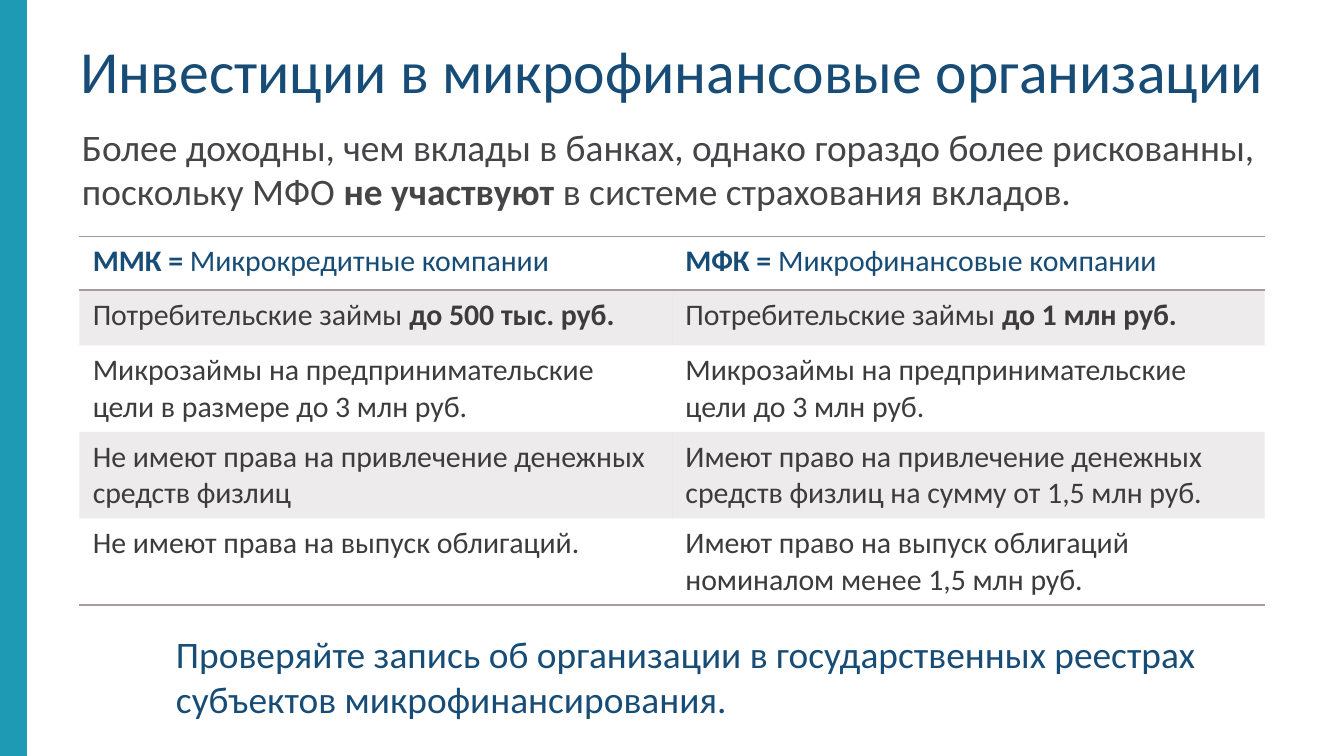
from lxml.etree import SubElement
from pptx import Presentation
from pptx.dml.color import RGBColor
from pptx.enum.shapes import MSO_SHAPE
from pptx.enum.text import MSO_ANCHOR, MSO_AUTO_SIZE, PP_ALIGN
from pptx.oxml import parse_xml
from pptx.oxml.ns import nsdecls, qn
from pptx.util import Inches, Pt

WIDTH = 10
HEIGHT = WIDTH * 9 / 16
FONT = "Calibri"
COLORS = {
    "accent": "1E9AB4",
    "heading": "164C76",
    "body": "454547",
    "cell": "3C3C3D",
    "rule": "A89B9D",
}
BAND_OPACITY = 20

# Each text is a list of (words, bold) runs
TITLE = [("Инвестиции в микрофинансовые организации", False)]
SUMMARY = [
    ("Более доходны, чем вклады в банках, однако гораздо более рискованны, поскольку МФО ", False),
    ("не участвуют ", True),
    ("в системе страхования вкладов.", False),
]
ADVICE = [("Проверяйте запись об организации в государственных реестрах "
           "субъектов микрофинансирования.", False)]
COMPARISON = [
    ([("ММК = ", True), ("Микрокредитные компании", False)],
     [("МФК = ", True), ("Микрофинансовые компании", False)]),
    ([("Потребительские займы ", False), ("до 500 тыс. руб.", True)],
     [("Потребительские займы ", False), ("до 1 млн руб.", True)]),
    ([("Микрозаймы на предпринимательские цели в размере до 3 млн руб.", False)],
     [("Микрозаймы на предпринимательские цели до 3 млн руб.", False)]),
    ([("Не имеют права на привлечение денежных средств физлиц", False)],
     [("Имеют право на привлечение денежных средств физлиц на сумму от 1,5 млн руб.", False)]),
    ([("Не имеют права на выпуск облигаций.", False)],
     [("Имеют право на выпуск облигаций номиналом менее 1,5 млн руб.", False)]),
]
ROW_HEIGHTS = [0.4, 0.41, 0.64, 0.64, 0.64]
COLUMN_WIDTH = 4.41


def rgb(name):
    return RGBColor.from_string(COLORS[name])


def add_runs(paragraph, runs, size, color):
    for words, bold in runs:
        run = paragraph.add_run()
        run.text = words
        run.font.name = FONT
        run.font.size = Pt(size)
        run.font.bold = bold
        run.font.color.rgb = rgb(color)


def fill_text(holder, box, runs, size, color):
    """Place a placeholder or text box and write one plain paragraph in it."""
    holder.left, holder.top, holder.width, holder.height = map(Inches, box)
    frame = holder.text_frame
    frame.word_wrap = True
    frame.auto_size = MSO_AUTO_SIZE.NONE
    frame.vertical_anchor = MSO_ANCHOR.TOP
    frame.margin_left = frame.margin_right = frame.margin_top = frame.margin_bottom = 0
    paragraph = frame.paragraphs[0]
    properties = paragraph._p.get_or_add_pPr()
    properties.set("marL", "0")
    properties.set("indent", "0")
    SubElement(properties, qn("a:buNone"))
    paragraph.alignment = PP_ALIGN.LEFT
    paragraph.space_before = Pt(0)
    add_runs(paragraph, runs, size, color)


def set_borders(cell, ruled_sides):
    """Rule the named sides (T, B) and clear the others."""
    properties = cell._tc.get_or_add_tcPr()
    for position, side in enumerate("LRTB"):
        if side in ruled_sides:
            paint = f'<a:solidFill><a:srgbClr val="{COLORS["rule"]}"/></a:solidFill>'
        else:
            paint = "<a:noFill/>"
        line = f'<a:ln{side} {nsdecls("a")} w="{Pt(1)}">{paint}</a:ln{side}>'
        properties.insert(position, parse_xml(line))


def shade(cell):
    cell.fill.solid()
    cell.fill.fore_color.rgb = rgb("rule")
    tint = cell._tc.tcPr.find(".//" + qn("a:srgbClr"))
    SubElement(tint, qn("a:alpha"), val=str(BAND_OPACITY * 1000))


def add_comparison(slide, left, top):
    columns = len(COMPARISON[0])
    last = len(COMPARISON) - 1
    table = slide.shapes.add_table(
        len(COMPARISON), columns, Inches(left), Inches(top),
        Inches(COLUMN_WIDTH * columns), Inches(sum(ROW_HEIGHTS))).table
    table.first_row = table.horz_banding = False
    for column in table.columns:
        column.width = Inches(COLUMN_WIDTH)
    for r, (row, height) in enumerate(zip(COMPARISON, ROW_HEIGHTS)):
        table.rows[r].height = Inches(height)
        ruled_sides = {0: "TB", 1: "T", last: "B"}.get(r, "")
        for c, runs in enumerate(row):
            cell = table.cell(r, c)
            add_runs(cell.text_frame.paragraphs[0], runs, 16, "cell" if r else "heading")
            if r % 2:
                shade(cell)
            else:
                cell.fill.background()
            set_borders(cell, ruled_sides)


def add_side_stripe(slide):
    stripe = slide.shapes.add_shape(
        MSO_SHAPE.RECTANGLE, 0, 0, Inches(WIDTH * 0.02), Inches(HEIGHT))
    stripe.shadow.inherit = False
    stripe.fill.solid()
    stripe.fill.fore_color.rgb = rgb("accent")
    stripe.line.fill.background()


def main():
    deck = Presentation()
    deck.slide_width, deck.slide_height = Inches(WIDTH), Inches(HEIGHT)
    slide = deck.slides.add_slide(deck.slide_layouts[1])

    # Title and summary
    fill_text(slide.shapes.title, (0.6, 0.25, 9.04, 0.43), TITLE, 32, "heading")
    fill_text(slide.placeholders[1], (0.61, 0.92, 8.8, 0.63), SUMMARY, 20, "body")

    # Comparison of the two kinds of company
    add_comparison(slide, 0.59, 1.76)

    # Closing advice
    advice = slide.shapes.add_textbox(0, 0, 0, 0)
    fill_text(advice, (1.31, 4.7, 7.86, 0.67), ADVICE, 20, "heading")

    # Coloured edge
    add_side_stripe(slide)
    deck.save("out.pptx")


if __name__ == "__main__":
    main()
